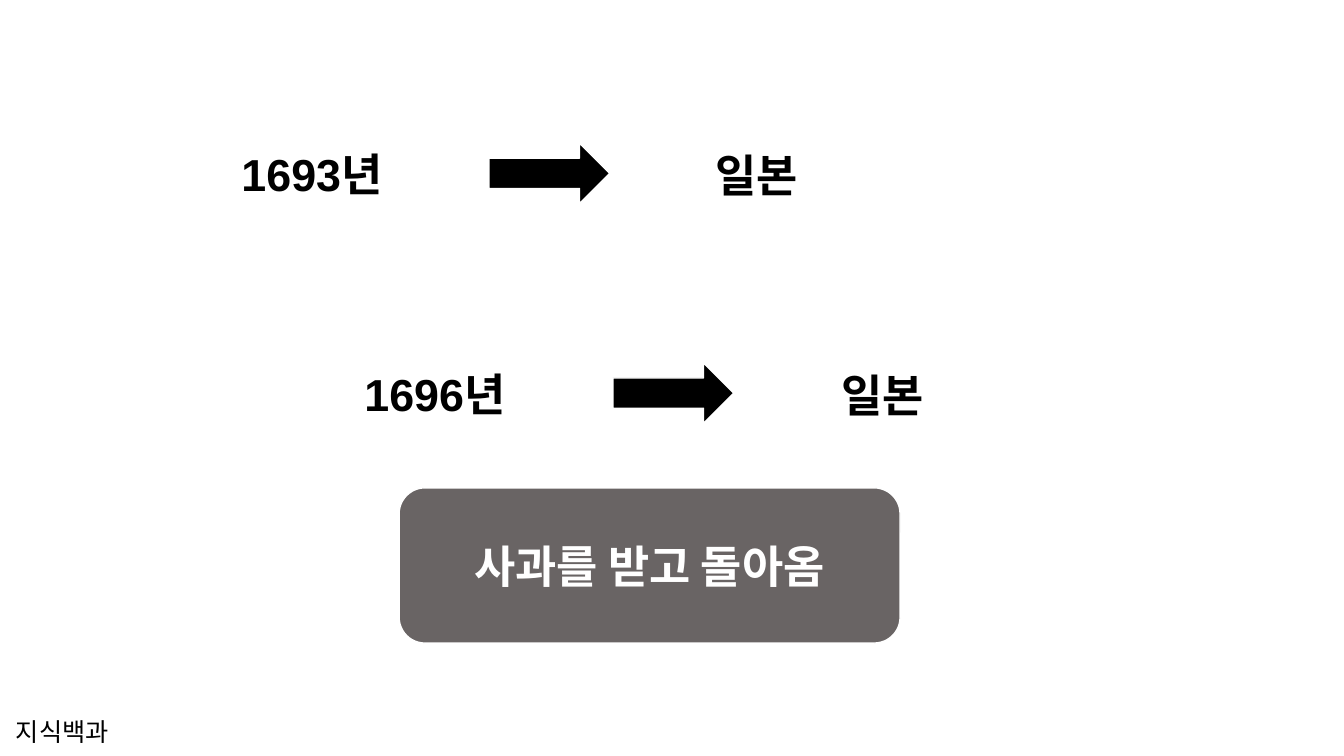
from pptx import Presentation
from pptx.dml.color import RGBColor
from pptx.enum.shapes import MSO_SHAPE
from pptx.enum.text import MSO_ANCHOR, PP_ALIGN
from pptx.util import Pt

RECT = MSO_SHAPE.RECTANGLE
ROUND = MSO_SHAPE.ROUNDED_RECTANGLE
ARROW = MSO_SHAPE.RIGHT_ARROW
MIDDLE, TOP = MSO_ANCHOR.MIDDLE, MSO_ANCHOR.TOP
CENTER, LEFT = PP_ALIGN.CENTER, PP_ALIGN.LEFT

TRIPS = [
    {"year": "1693년", "place": "일본", "lefts": (53.28, 349.2, 504)},
    {"year": "1696년", "place": "일본", "lefts": (141.12, 437.76, 594)},
]
RESULT = "사과를 받고 돌아옴"
SOURCE = "지식백과"

THEME = {
    "black": RGBColor(0, 0, 0),
    "white": RGBColor(255, 255, 255),
    "gray": RGBColor(0x69, 0x64, 0x64),
    "main": {"name": "Arial", "size": Pt(32), "bold": True},
    "result": {"name": "Roboto Slab", "size": Pt(32), "bold": True},
    "source": {"name": "Roboto Slab", "size": Pt(18), "bold": False},
}
ROW_TOP, ROW_STEP = 56.16, 156.96
ARROW_DROP = 46.08


def write(shape, text, style, color, anchor=TOP, align=LEFT):
    frame = shape.text_frame
    frame.word_wrap = True
    frame.vertical_anchor = anchor
    para = frame.paragraphs[0]
    para.text = text
    para.alignment = align
    font = para.runs[0].font
    for key, value in THEME[style].items():
        setattr(font, key, value)
    font.color.rgb = THEME[color]


def block(slide, kind, box, fill):
    shape = slide.shapes.add_shape(kind, *map(Pt, box))
    shape.shadow.inherit = False
    shape.fill.solid()
    shape.fill.fore_color.rgb = THEME[fill]
    shape.line.color.rgb = THEME["white"]
    shape.line.width = Pt(1)
    return shape


def label(slide, box, text, style):
    shape = slide.shapes.add_textbox(*map(Pt, box))
    write(shape, text, style, "black")


def main():
    deck = Presentation()
    deck.slide_width, deck.slide_height = Pt(960), Pt(540)
    slide = deck.slides.add_slide(deck.slide_layouts[6])

    for row, trip in enumerate(TRIPS):
        top = ROW_TOP + row * ROW_STEP
        year, arrow, place = trip["lefts"]
        card = block(slide, RECT, (year, top, 339.12, 135.36), "white")
        write(card, trip["year"], "main", "black", MIDDLE, CENTER)
        block(slide, ARROW, (arrow, top + ARROW_DROP, 86.4, 43.2), "black")
        label(slide, (place, top + ARROW_DROP, 208.08, 46.08), trip["place"], "main")

    label(slide, (4.32, 508.32, 218.16, 28.8), SOURCE, "source")
    card = block(slide, ROUND, (285.12, 348.48, 357.84, 110.88), "gray")
    write(card, RESULT, "result", "white", MIDDLE, CENTER)
    deck.save("out.pptx")


if __name__ == "__main__":
    main()
